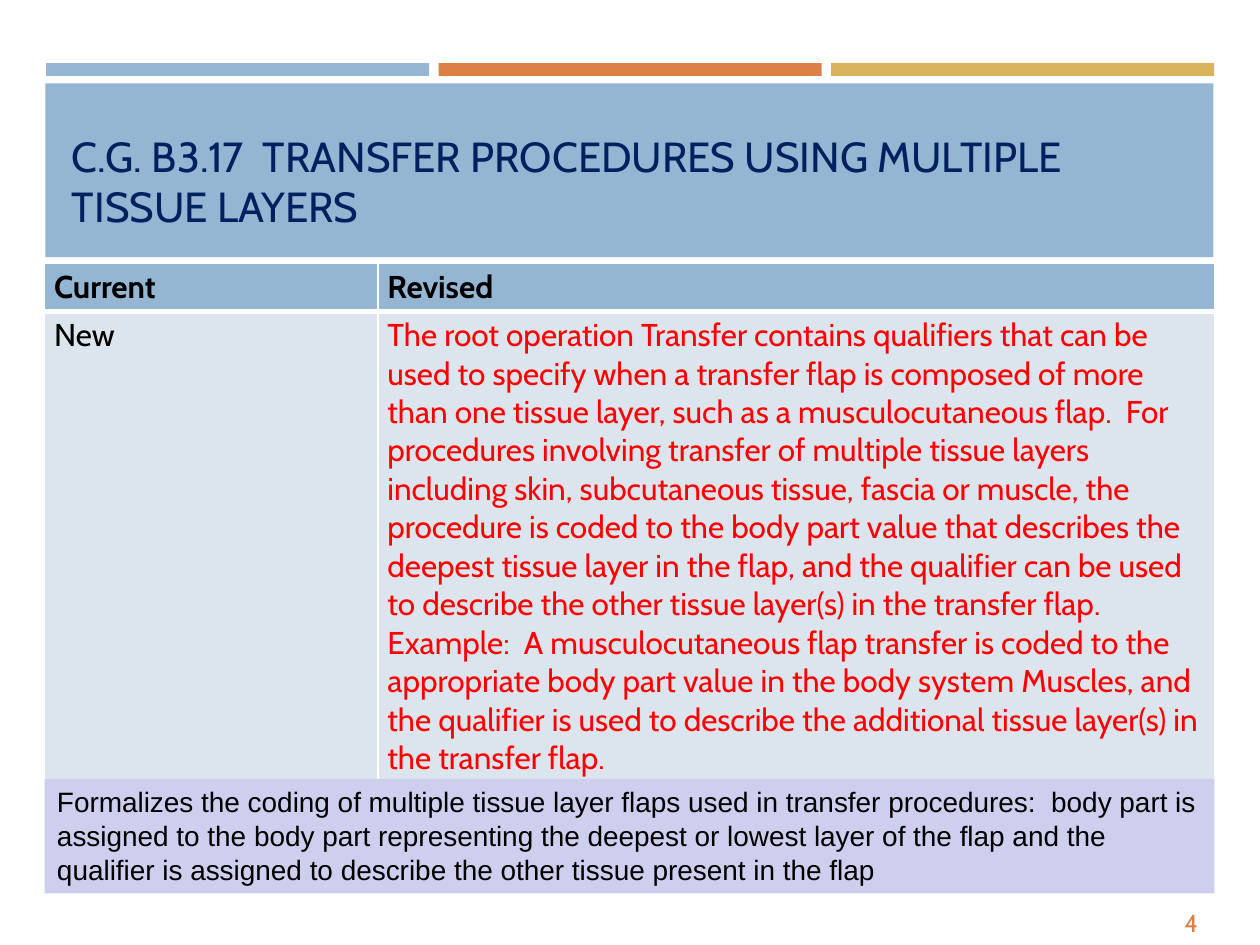
from lxml import etree
from pptx import Presentation
from pptx.dml.color import RGBColor
from pptx.enum.shapes import MSO_SHAPE
from pptx.enum.text import MSO_ANCHOR, MSO_AUTO_SIZE, PP_ALIGN
from pptx.oxml.ns import qn
from pptx.util import Pt

RECTANGLE = MSO_SHAPE.RECTANGLE
TOP, MIDDLE, BOTTOM = MSO_ANCHOR.TOP, MSO_ANCHOR.MIDDLE, MSO_ANCHOR.BOTTOM
LEFT, RIGHT = PP_ALIGN.LEFT, PP_ALIGN.RIGHT
NO_AUTOFIT = MSO_AUTO_SIZE.NONE

BLUE = RGBColor(0x94, 0xB6, 0xD2)
ORANGE = RGBColor(0xDD, 0x80, 0x47)
GOLD = RGBColor(0xD8, 0xB2, 0x5C)
PALE_BLUE = RGBColor(0xDC, 0xE5, 0xEE)
LAVENDER = RGBColor(0xCE, 0xCE, 0xEF)
NAVY = RGBColor(0x00, 0x20, 0x60)
RED = RGBColor(0xFF, 0x00, 0x00)
BLACK = RGBColor(0x00, 0x00, 0x00)

TITLE = "C.G. B3.17  TRANSFER PROCEDURES USING MULTIPLE TISSUE LAYERS"
GUIDELINE = [
    "The root operation Transfer contains qualifiers that can be used to specify when a "
    "transfer flap is composed of more than one tissue layer, such as a musculocutaneous "
    "flap.  For procedures involving transfer of multiple tissue layers including skin, "
    "subcutaneous tissue, fascia or muscle, the procedure is coded to the body part value "
    "that describes the deepest tissue layer in the flap, and the qualifier can be used to "
    "describe the other tissue layer(s) in the transfer flap.",
    "Example:  A musculocutaneous flap transfer is coded to the appropriate body part value "
    "in the body system Muscles, and the qualifier is used to describe the additional "
    "tissue layer(s) in the transfer flap.",
]
RATIONALE = (
    "Formalizes the coding of multiple tissue layer flaps used in transfer procedures:  "
    "body part is assigned to the body part representing the deepest or lowest layer of the "
    "flap and the qualifier is assigned to describe the other tissue present in the flap"
)


def write(frame, texts, size, color, font="Cabin", bold=False, align=LEFT):
    frame.word_wrap = True
    frame.text = "\n".join(texts)
    for para in frame.paragraphs:
        para.alignment = align
        para.font.name = font
        para.font.size = Pt(size)
        para.font.bold = bold
        para.font.color.rgb = color


def add_block(page, left, top, width, height, color):
    block = page.shapes.add_shape(RECTANGLE, Pt(left), Pt(top), Pt(width), Pt(height))
    block.shadow.inherit = False
    block.fill.solid()
    block.fill.fore_color.rgb = color
    block.line.fill.background()
    return block


def add_accent_bars(page, left, top, width, height, gap=5.4):
    colors = (BLUE, ORANGE, GOLD)
    bar_width = (width - gap * (len(colors) - 1)) / len(colors)
    for index, color in enumerate(colors):
        add_block(page, left + index * (bar_width + gap), top, bar_width, height, color)


def add_title(page, left, top, width, height):
    """Place the title over a band, which is sent behind the placeholder."""
    band = add_block(page, left, top, width, height, BLUE)
    title = page.shapes.title
    band.element.addnext(title.element)
    title.left, title.top = Pt(left + 7.9), Pt(top + 10)
    title.width, title.height = Pt(width - 16), Pt(77.8)
    write(title.text_frame, [TITLE], 24, NAVY)
    title.text_frame.auto_size = NO_AUTOFIT
    title.text_frame.vertical_anchor = BOTTOM


def set_borders(cell, widths):
    """Draw white borders; widths maps the sides L, R, T, B to points."""
    properties = cell._tc.get_or_add_tcPr()
    for index, (side, width) in enumerate(widths.items()):
        line = etree.Element(qn(f"a:ln{side}"), w=str(Pt(width)))
        fill = etree.SubElement(line, qn("a:solidFill"))
        etree.SubElement(fill, qn("a:srgbClr"), val="FFFFFF")
        properties.insert(index, line)


def add_comparison_table(page, left, top, width, height):
    header_height, current_width = 26.6, 190.5
    rows = [
        [(["Current"], BLACK), (["Revised"], BLACK)],
        [(["New"], BLACK), (GUIDELINE, RED)],
    ]
    table = page.shapes.add_table(2, 2, Pt(left), Pt(top), Pt(width), Pt(height)).table
    table.columns[0].width = Pt(current_width)
    table.columns[1].width = Pt(width - current_width)
    table.rows[0].height = Pt(header_height)
    table.rows[1].height = Pt(height - header_height)
    for row_index, row in enumerate(rows):
        is_header = row_index == 0
        for column_index, (texts, color) in enumerate(row):
            cell = table.cell(row_index, column_index)
            cell.margin_left = cell.margin_right = Pt(5.4)
            cell.margin_top = cell.margin_bottom = Pt(2.7)
            cell.vertical_anchor = TOP
            cell.fill.solid()
            cell.fill.fore_color.rgb = BLUE if is_header else PALE_BLUE
            write(cell.text_frame, texts, 18, color, bold=is_header)
            top_width, bottom_width = (1, 3) if is_header else (3, 1)
            set_borders(cell, {"L": 1, "R": 1, "T": top_width, "B": bottom_width})


def add_rationale(page, left, top, width, height):
    box = add_block(page, left, top, width, height, LAVENDER)
    write(box.text_frame, [RATIONALE], 16, BLACK, font="Arial")
    box.text_frame.vertical_anchor = TOP


def add_page_number(page, left, top, width, height):
    box = page.shapes.add_textbox(Pt(left), Pt(top), Pt(width), Pt(height))
    write(box.text_frame, ["4"], 14, ORANGE, align=RIGHT)
    box.text_frame.vertical_anchor = MIDDLE


def main():
    deck = Presentation()
    deck.slide_width, deck.slide_height = Pt(720), Pt(540)
    page = deck.slides.add_slide(deck.slide_layouts[5])
    add_accent_bars(page, 26.4, 36, 667.4, 7.4)
    add_title(page, 26, 47.7, 667.4, 99.3)
    add_comparison_table(page, 25.5, 150.6, 668.4, 294.4)
    add_rationale(page, 25.5, 445, 668.4, 65.5)
    add_page_number(page, 669.3, 516.5, 22.5, 21.6)
    deck.save("out.pptx")


if __name__ == "__main__":
    main()
